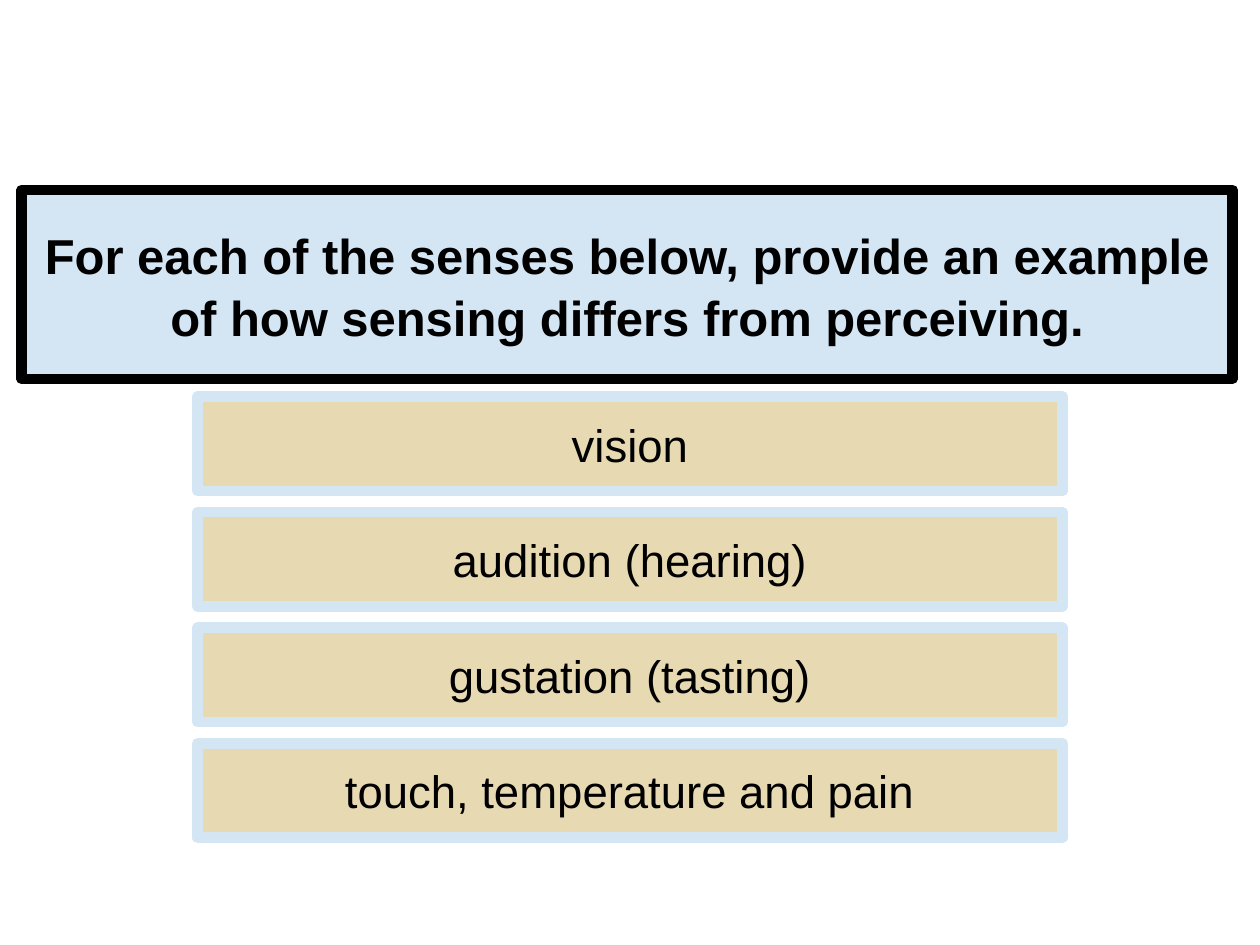
from dataclasses import dataclass

from pptx import Presentation
from pptx import util as u
from pptx.dml.color import RGBColor
from pptx.enum import shapes, text

COLOURS = {"black": "000000", "pale_blue": "D4E5F4", "sand": "E7D9B1"}
BORDER = 6
SENSES = ("vision", "audition (hearing)", "gustation (tasting)",
          "touch, temperature and pain")
SENSE_TOP, SENSE_STEP = 226.6, 66.05


@dataclass
class Panel:
    left: float
    top: float
    width: float
    height: float
    fill: str
    border: str


def colour(name: str) -> RGBColor:
    return RGBColor.from_string(COLOURS[name])


def write_text(box, wording: str, *, size: float, bold: bool = False,
               spacing: float = 1.0) -> None:
    frame = box.text_frame
    frame.word_wrap = True
    frame.vertical_anchor = text.MSO_ANCHOR.MIDDLE
    para = frame.paragraphs[0]
    para.alignment = text.PP_ALIGN.CENTER
    para.line_spacing = spacing
    span = para.add_run()
    span.text = wording
    span.font.name = "Arial"
    span.font.size = u.Pt(size)
    span.font.bold = bold
    span.font.color.rgb = colour("black")


def draw_panel(page, panel: Panel):
    box = page.shapes.add_shape(
        shapes.MSO_SHAPE.RECTANGLE, u.Pt(panel.left), u.Pt(panel.top),
        u.Pt(panel.width), u.Pt(panel.height))
    box.shadow.inherit = False
    box.fill.solid()
    box.fill.fore_color.rgb = colour(panel.fill)
    box.line.color.rgb = colour(panel.border)
    box.line.width = u.Pt(BORDER)
    return box


def main() -> None:
    deck = Presentation()
    deck.slide_width, deck.slide_height = u.Pt(720), u.Pt(540)
    page = deck.slides.add_slide(deck.slide_layouts[6])

    question = draw_panel(
        page, Panel(12.4, 108.5, 692, 108, "pale_blue", "black"))
    write_text(question, "For each of the senses below, provide an example "
               "of how sensing differs from perceiving.",
               size=28, bold=True, spacing=1.05)

    for row, sense in enumerate(SENSES):
        top = SENSE_TOP + row * SENSE_STEP
        box = draw_panel(
            page, Panel(112.8, top, 494.4, 54, "sand", "pale_blue"))
        write_text(box, sense, size=26)

    deck.save("out.pptx")


if __name__ == "__main__":
    main()
